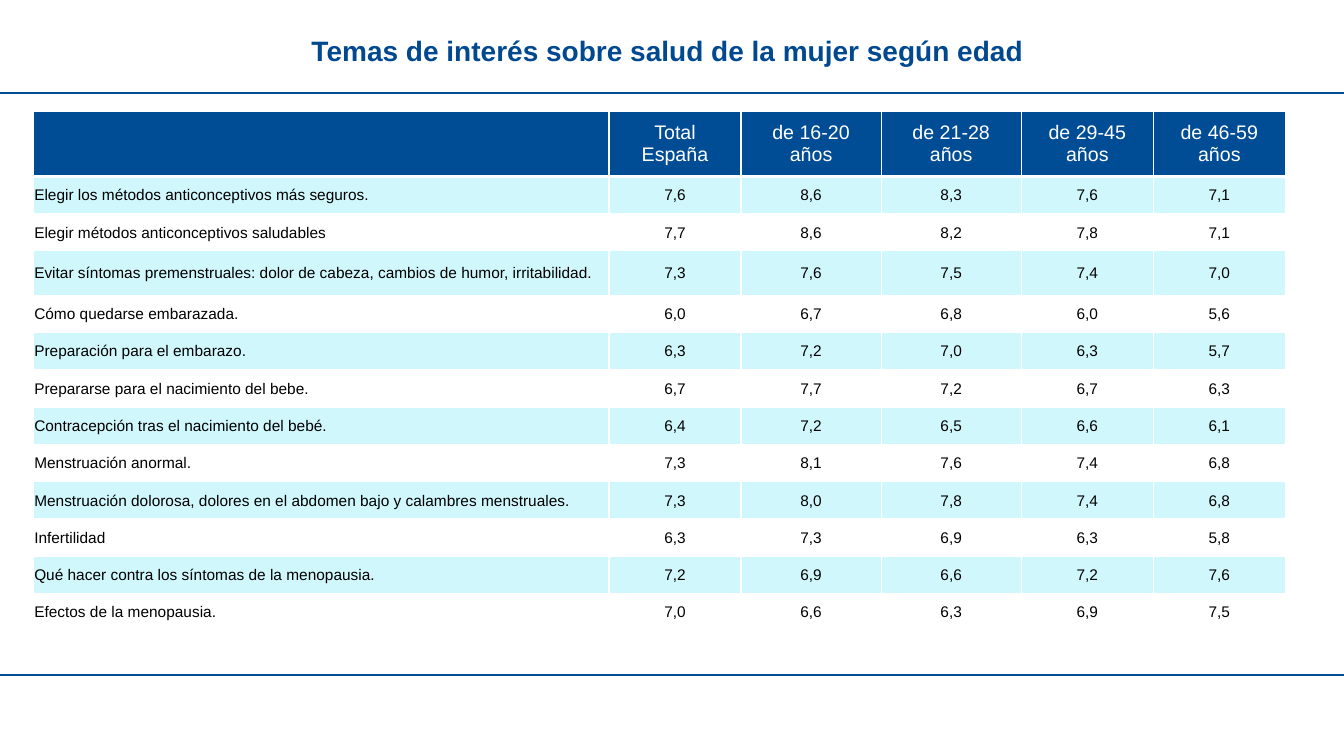
from lxml import etree
from pptx import Presentation
from pptx.dml.color import RGBColor
from pptx.enum.shapes import MSO_CONNECTOR
from pptx.enum.text import MSO_ANCHOR, PP_ALIGN
from pptx.oxml.ns import qn
from pptx.util import Inches, Pt

COLORS = {"rule": "004D96", "title": "004990", "band": "D0F7FC",
          "white": "FFFFFF", "black": "000000"}
SLIDE_WIDTH = 13.33
COLUMN_WIDTHS = [5.71, 1.31, 1.39, 1.39, 1.31, 1.31]
HEADER_HEIGHT, ROW_HEIGHT, TALL_ROW_HEIGHT = 0.64, 0.37, 0.44
TALL_ROW = 3
BODY_MARGINS = {"margin_left": 0.01, "margin_top": 0.01,
                "margin_right": 0.01, "margin_bottom": 0}

HEADERS = ["", "Total España", "de 16-20 años", "de 21-28 años",
           "de 29-45 años", "de 46-59 años"]
TOPICS = [
    ("Elegir los métodos anticonceptivos más seguros.", "7,6 8,6 8,3 7,6 7,1"),
    ("Elegir métodos anticonceptivos saludables", "7,7 8,6 8,2 7,8 7,1"),
    ("Evitar síntomas premenstruales: dolor de cabeza, cambios de humor, irritabilidad.",
     "7,3 7,6 7,5 7,4 7,0"),
    ("Cómo quedarse embarazada.", "6,0 6,7 6,8 6,0 5,6"),
    ("Preparación para el embarazo.", "6,3 7,2 7,0 6,3 5,7"),
    ("Prepararse para el nacimiento del bebe.", "6,7 7,7 7,2 6,7 6,3"),
    ("Contracepción tras el nacimiento del bebé.", "6,4 7,2 6,5 6,6 6,1"),
    ("Menstruación anormal.", "7,3 8,1 7,6 7,4 6,8"),
    ("Menstruación dolorosa, dolores en el abdomen bajo y calambres menstruales.",
     "7,3 8,0 7,8 7,4 6,8"),
    ("Infertilidad", "6,3 7,3 6,9 6,3 5,8"),
    ("Qué hacer contra los síntomas de la menopausia.", "7,2 6,9 6,6 7,2 7,6"),
    ("Efectos de la menopausia.", "7,0 6,6 6,3 6,9 7,5"),
]


def color(name):
    return RGBColor.from_string(COLORS[name])


def write(frame, text, size, ink, align, bold=False):
    paragraph = frame.paragraphs[0]
    paragraph.alignment = align
    run = paragraph.add_run()
    run.text = text
    for attribute, value in {"name": "Arial", "size": Pt(size), "bold": bold}.items():
        setattr(run.font, attribute, value)
    run.font.color.rgb = color(ink)


def add_rule(slide, top):
    """Draw a line across the whole slide."""
    rule = slide.shapes.add_connector(MSO_CONNECTOR.STRAIGHT, 0, Inches(top),
                                      Inches(SLIDE_WIDTH), Inches(top))
    rule.line.color.rgb = color("rule")
    rule.line.width = Pt(1.5)
    etree.SubElement(rule._element.spPr, qn("a:effectLst"))


def add_title(slide, text):
    frame = slide.shapes.add_textbox(Inches(0.39), Inches(0.31),
                                     Inches(12.54), Inches(0.44)).text_frame
    margins = {"margin_left": 0, "margin_top": 0.02,
               "margin_right": 0, "margin_bottom": 0}
    for side, inset in margins.items():
        setattr(frame, side, Inches(inset))
    frame.word_wrap = True
    write(frame, text, 20, "title", PP_ALIGN.CENTER, bold=True)


def set_borders(cell, bottom_width):
    """Give a cell white edges; they must precede its fill in the XML."""
    properties = cell._tc.get_or_add_tcPr()
    for position, (edge, width) in enumerate(
            [("lnL", 1), ("lnR", 1), ("lnT", 1), ("lnB", bottom_width)]):
        border = etree.Element(qn(f"a:{edge}"), w=str(Pt(width)))
        fill = etree.SubElement(border, qn("a:solidFill"))
        etree.SubElement(fill, qn("a:srgbClr"), val=COLORS["white"])
        properties.insert(position, border)


def style_cell(cell, fill, bottom_width=1):
    cell.fill.solid()
    cell.fill.fore_color.rgb = color(fill)
    cell.vertical_anchor = MSO_ANCHOR.MIDDLE
    set_borders(cell, bottom_width)


def add_topic_table(slide):
    heights = [HEADER_HEIGHT] + [ROW_HEIGHT] * len(TOPICS)
    heights[TALL_ROW] = TALL_ROW_HEIGHT
    table = slide.shapes.add_table(
        len(heights), len(HEADERS), Inches(0.33), Inches(1.11),
        Inches(sum(COLUMN_WIDTHS)), Inches(sum(heights))).table
    for column, width in zip(table.columns, COLUMN_WIDTHS):
        column.width = Inches(width)
    for row, height in zip(table.rows, heights):
        row.height = Inches(height)

    for index, header in enumerate(HEADERS):
        cell = table.cell(0, index)
        style_cell(cell, "rule", bottom_width=3)
        if header:
            write(cell.text_frame, header, 14, "white", PP_ALIGN.CENTER)

    for row_index, (topic, scores) in enumerate(TOPICS, start=1):
        fill = "band" if row_index % 2 else "white"
        for index, text in enumerate([topic, *scores.split()]):
            cell = table.cell(row_index, index)
            style_cell(cell, fill)
            for side, inset in BODY_MARGINS.items():
                setattr(cell, side, Inches(inset))
            align = PP_ALIGN.CENTER if index else PP_ALIGN.LEFT
            write(cell.text_frame, text, 11, "black", align)


def main():
    deck = Presentation()
    deck.slide_width, deck.slide_height = Inches(SLIDE_WIDTH), Inches(7.5)
    slide = deck.slides.add_slide(deck.slide_layouts[6])
    for top in (0.92, 6.7):
        add_rule(slide, top)
    add_title(slide, "Temas de interés sobre salud de la mujer según edad ")
    add_topic_table(slide)
    deck.save("out.pptx")


if __name__ == "__main__":
    main()
